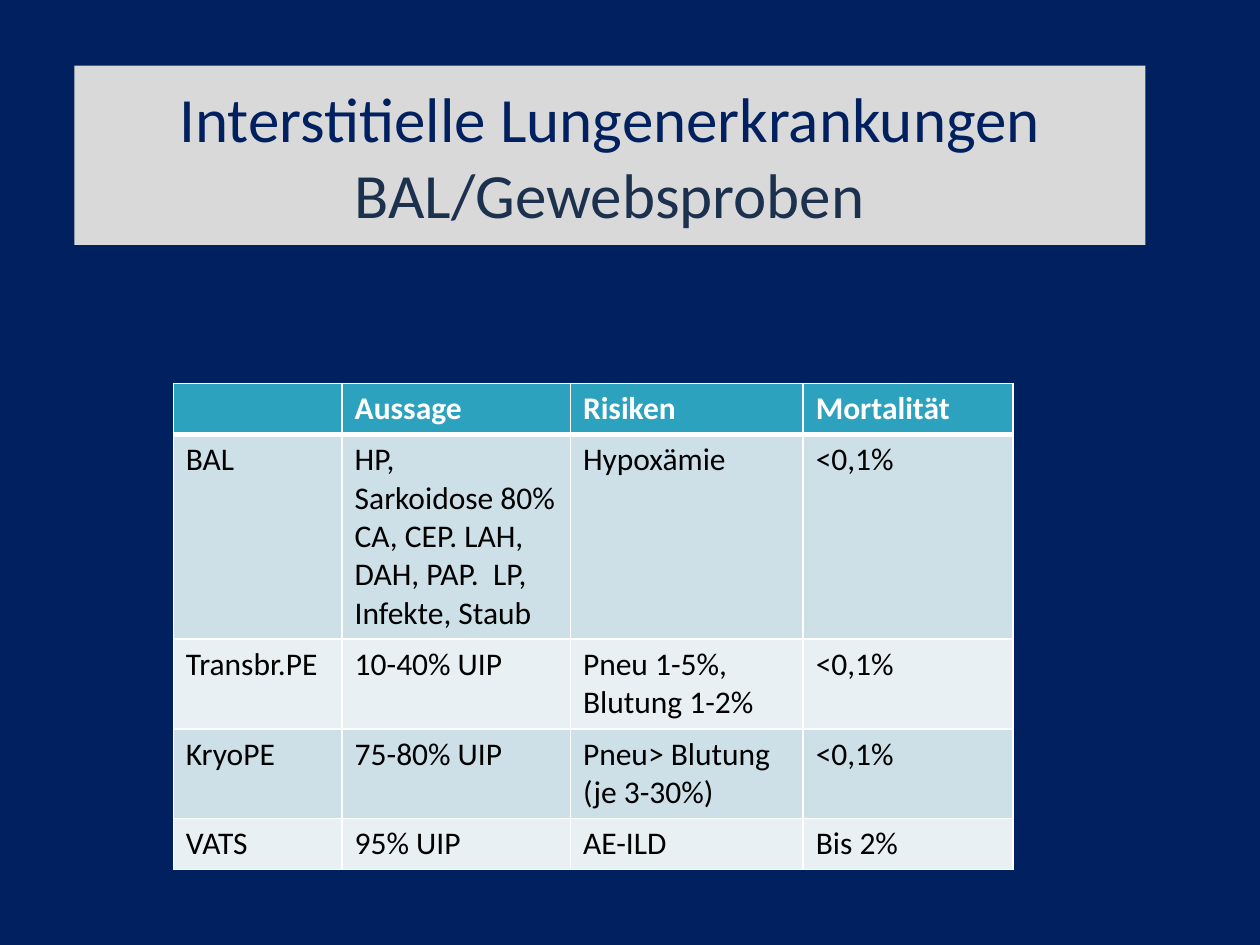
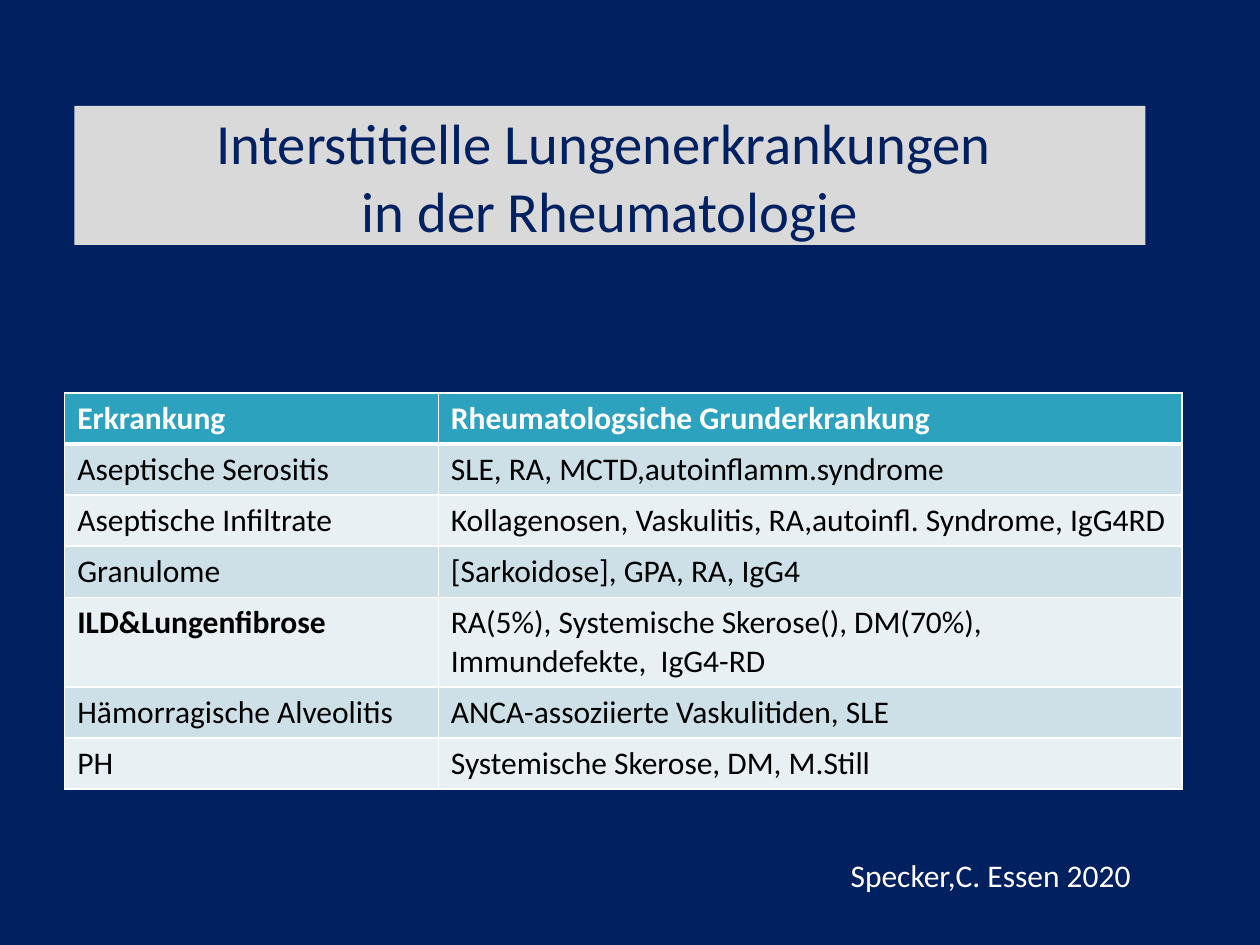
from lxml.etree import SubElement
from pptx import Presentation
from pptx.dml.color import RGBColor
from pptx.enum.shapes import MSO_SHAPE
from pptx.enum.text import MSO_ANCHOR, PP_ALIGN
from pptx.oxml.ns import qn
from pptx.util import Pt

NAVY = RGBColor(0x00, 0x20, 0x60)
SLATE = RGBColor(0x1C, 0x31, 0x4E)
GREY = RGBColor(0xD9, 0xD9, 0xD9)
TEAL = RGBColor(0x2D, 0xA2, 0xBF)
BANDS = RGBColor(0xE8, 0xF0, 0xF4), RGBColor(0xCD, 0xE0, 0xE8)
WHITE = RGBColor(0xFF, 0xFF, 0xFF)
BLACK = RGBColor(0x00, 0x00, 0x00)

SAMPLES = [
    ["", "Aussage", "Risiken", "Mortalität"],
    ["BAL", "HP,\nSarkoidose 80%\nCA, CEP. LAH, DAH, PAP.  LP, Infekte, Staub",
     "Hypoxämie", "<0,1%"],
    ["Transbr.PE", "10-40% UIP", "Pneu 1-5%, Blutung 1-2%", "<0,1%"],
    ["KryoPE", "75-80% UIP", "Pneu> Blutung\n(je 3-30%)", "<0,1%"],
    ["VATS", "95% UIP", "AE-ILD", "Bis 2%"],
]
CAUSES = [
    ["Erkrankung", "Rheumatologsiche Grunderkrankung"],
    ["Aseptische Serositis", "SLE, RA, MCTD,autoinflamm.syndrome"],
    ["Aseptische Infiltrate",
     "Kollagenosen, Vaskulitis, RA,autoinfl. Syndrome, IgG4RD"],
    ["Granulome", "[Sarkoidose], GPA, RA, IgG4"],
    ["ILD&Lungenfibrose",
     "RA(5%), Systemische Skerose(), DM(70%), Immundefekte,  IgG4-RD"],
    ["Hämorragische Alveolitis", "ANCA-assoziierte Vaskulitiden, SLE"],
    ["PH", "Systemische Skerose, DM, M.Still"],
]


class Deck:
    font = "Calibri"
    size = 18
    row = 29.2
    foot = 140

    def __init__(self):
        self.prs = Presentation()
        self.prs.slide_width, self.prs.slide_height = Pt(720), Pt(540)

    def page(self):
        self.slide = self.prs.slides.add_slide(self.prs.slide_layouts[6])
        fill = self.slide.background.fill
        fill.solid()
        fill.fore_color.rgb = NAVY

    def style(self, frame, color, size=size, bold=False):
        for para in frame.paragraphs:
            for run in para.runs:
                run.font.name = self.font
                run.font.size = Pt(size)
                run.font.bold = bold
                run.font.color.rgb = color

    def title(self, text, top, size):
        box = self.slide.shapes.add_shape(
            MSO_SHAPE.RECTANGLE, Pt(42.5), Pt(top), Pt(612), Pt(self.foot - top))
        box.shadow.inherit = False
        box.fill.solid()
        box.fill.fore_color.rgb = GREY
        box.line.fill.background()
        frame = box.text_frame
        frame.word_wrap = True
        frame.vertical_anchor = MSO_ANCHOR.MIDDLE
        para = frame.paragraphs[0]
        para.text = text
        para.alignment = PP_ALIGN.CENTER
        self.style(frame, NAVY, size)
        return para

    def edges(self, cell, top, base):
        props = cell._tc.get_or_add_tcPr()
        for tag, width in (("L", 1), ("R", 1), ("T", top), ("B", base)):
            line = SubElement(props, qn("a:ln" + tag), w=str(Pt(width)))
            fill = SubElement(line, qn("a:solidFill"))
            SubElement(fill, qn("a:srgbClr"), val=str(WHITE))

    def table(self, data, left, top, widths, strong=()):
        grid = self.slide.shapes.add_table(
            len(data), len(widths), Pt(left), Pt(top),
            Pt(sum(widths)), Pt(self.row * len(data))).table
        for col, width in zip(grid.columns, widths):
            col.width = Pt(width)
        for r, texts in enumerate(data):
            head = r == 0
            for c, text in enumerate(texts):
                cell = grid.cell(r, c)
                self.edges(cell, 3 if r == 1 else 1, 3 if head else 1)
                cell.fill.solid()
                cell.fill.fore_color.rgb = TEAL if head else BANDS[r % 2]
                cell.text_frame.text = text
                self.style(cell.text_frame, WHITE if head else BLACK,
                           bold=head or text in strong)

    def note(self, text, left, top, width, height):
        box = self.slide.shapes.add_textbox(
            Pt(left), Pt(top), Pt(width), Pt(height))
        box.text_frame.word_wrap = True
        box.text_frame.text = text
        self.style(box.text_frame, WHITE)


def main():
    deck = Deck()

    deck.page()
    title = deck.title(
        "Interstitielle Lungenerkrankungen\vBAL/Gewebsproben", 37.5, 36)
    title.runs[1].font.color.rgb = SLATE
    deck.table(SAMPLES, 99, 219, [96.5, 130.5, 133, 120])

    deck.page()
    deck.title("Interstitielle Lungenerkrankungen \vin der Rheumatologie",
               60.5, 32.4)
    deck.table(CAUSES, 37, 224.5, [213.5, 425], ["ILD&Lungenfibrose"])
    deck.note("Specker,C. Essen 2020", 479, 485.5, 199, 29)

    deck.prs.save("out.pptx")


if __name__ == "__main__":
    main()
